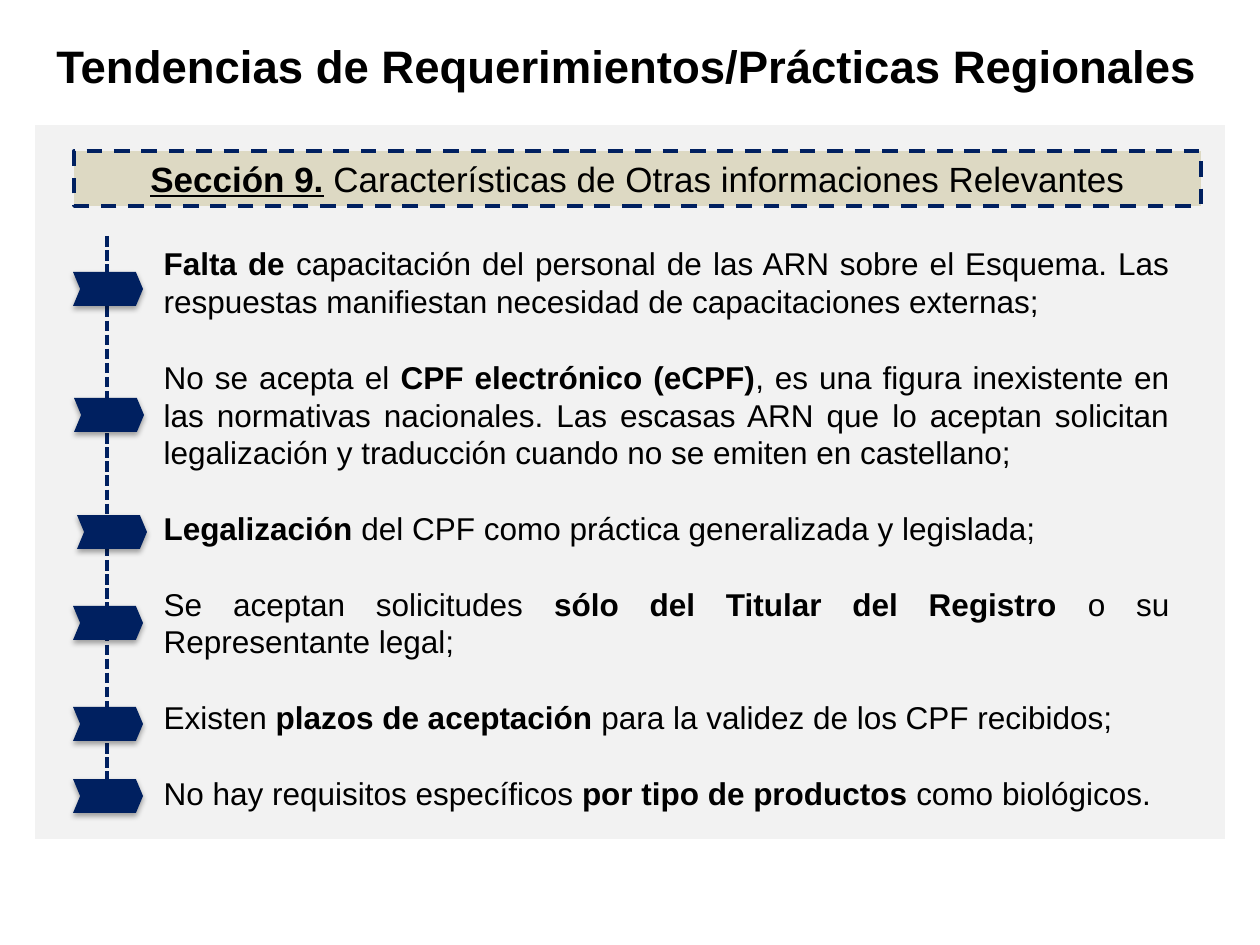
from lxml import etree
from pptx import Presentation
from pptx.dml.color import RGBColor
from pptx.enum.dml import MSO_LINE
from pptx.enum.shapes import MSO_CONNECTOR, MSO_SHAPE
from pptx.enum.text import MSO_ANCHOR, PP_ALIGN
from pptx.oxml.ns import qn
from pptx.util import Pt

RECT, CHEVRON = MSO_SHAPE.RECTANGLE, MSO_SHAPE.CHEVRON
LINE = MSO_CONNECTOR.STRAIGHT
DASH, DOTS = MSO_LINE.DASH, MSO_LINE.SQUARE_DOT
MID, TOP = MSO_ANCHOR.MIDDLE, MSO_ANCHOR.TOP
CENTER, JUST = PP_ALIGN.CENTER, PP_ALIGN.JUSTIFY
FONT = "Arial"
HEX = {"panel": "F2F2F2", "band": "DDD9C3", "navy": "002060", "text": "000000"}
PITCH = Pt(21.6)

# Content: ** marks bold text
TITLE = "**Tendencias de Requerimientos/Prácticas Regionales"
HEAD = "**Sección 9.** Características de Otras informaciones Relevantes"
ITEMS = [
    "**Falta de **capacitación del personal de las ARN sobre el Esquema. "
    "Las respuestas manifiestan necesidad de capacitaciones externas;",
    "No se acepta el **CPF electrónico (eCPF)**, es una figura inexistente en "
    "las normativas nacionales. Las escasas ARN que lo aceptan solicitan "
    "legalización y traducción cuando no se emiten en castellano;",
    "**Legalización **del CPF como práctica generalizada y legislada;",
    "Se aceptan solicitudes **sólo del Titular del Registro **o su "
    "Representante legal;",
    "Existen **plazos de aceptación **para la validez de los CPF recibidos;",
    "No hay requisitos específicos **por tipo de productos **como biológicos.",
]
# Left and top of each marker
MARKS = [(73, 272), (74, 398), (77, 515), (73, 606), (73, 707), (73, 779)]


def px(n):
    return round(n * 914400 / 126)


def color(name):
    return RGBColor.from_string(HEX[name])


def place(shape, *box):
    shape.left, shape.top, shape.width, shape.height = map(px, box)
    slide.shapes._spTree.append(shape._element)  # bring to front


def block(kind, fill, *box):
    shape = slide.shapes.add_shape(kind, *map(px, box))
    shape.shadow.inherit = False
    shape.fill.solid()
    shape.fill.fore_color.rgb = color(fill)
    shape.line.fill.background()
    return shape


def write(par, text, size, align):
    par.alignment = align
    par.space_before = Pt(0)
    par.font.name, par.font.size = FONT, Pt(size)
    par.font.color.rgb = color("text")
    for i, part in enumerate(text.split("**")):
        if part:
            run = par.add_run()
            run.text = part
            run.font.bold = i % 2 == 1


def stroke(line, width, dash):
    line.color.rgb = color("navy")
    line.width, line.dash_style = Pt(width), dash


def shade(shape):
    effects = shape._element.spPr.find(qn("a:effectLst"))
    shadow = etree.SubElement(effects, qn("a:outerShdw"), blurRad="39370",
                              dist="22860", dir="5400000", rotWithShape="0")
    tint = etree.SubElement(shadow, qn("a:srgbClr"), val=HEX["text"])
    etree.SubElement(tint, qn("a:alpha"), val="35000")


prs = Presentation()
prs.slide_width, prs.slide_height = px(1260), px(945)
slide = prs.slides.add_slide(prs.slide_layouts[1])
title, body = slide.placeholders

# Panel and section band
block(RECT, "panel", 35, 125, 1190, 714)
band = block(RECT, "band", 74, 151, 1127, 55)
stroke(band.line, 2.25, DASH)
band.text_frame.vertical_anchor = MID
head = band.text_frame.paragraphs[0]
write(head, HEAD, 20, CENTER)
head.runs[0].font.underline = True

# Timeline and markers
axis = slide.shapes.add_connector(LINE, px(107), px(236), px(107), px(790))
etree.SubElement(axis._element.spPr, qn("a:effectLst"))
stroke(axis.line, 2, DOTS)
for left, top in MARKS:
    mark = block(CHEVRON, "navy", left, top, 70, 34)
    mark.adjustments[0] = 0.21
    shade(mark)

# Findings
place(body, 151, 238, 1031, 624)
frame = body.text_frame
frame.word_wrap, frame.vertical_anchor = True, TOP
for i, item in enumerate(ITEMS):
    par = frame.paragraphs[0] if i == 0 else frame.add_paragraph()
    props = par._p.get_or_add_pPr()
    props.set("marL", "0")
    props.set("indent", "0")
    etree.SubElement(props, qn("a:buNone"))
    write(par, item, 18, JUST)
    par.line_spacing = PITCH
    if i:
        par.space_before = PITCH

# Title
place(title, 0, 37, 1254, 57)
title.text_frame.vertical_anchor = MID
write(title.text_frame.paragraphs[0], TITLE, 26, CENTER)

prs.save("out.pptx")
